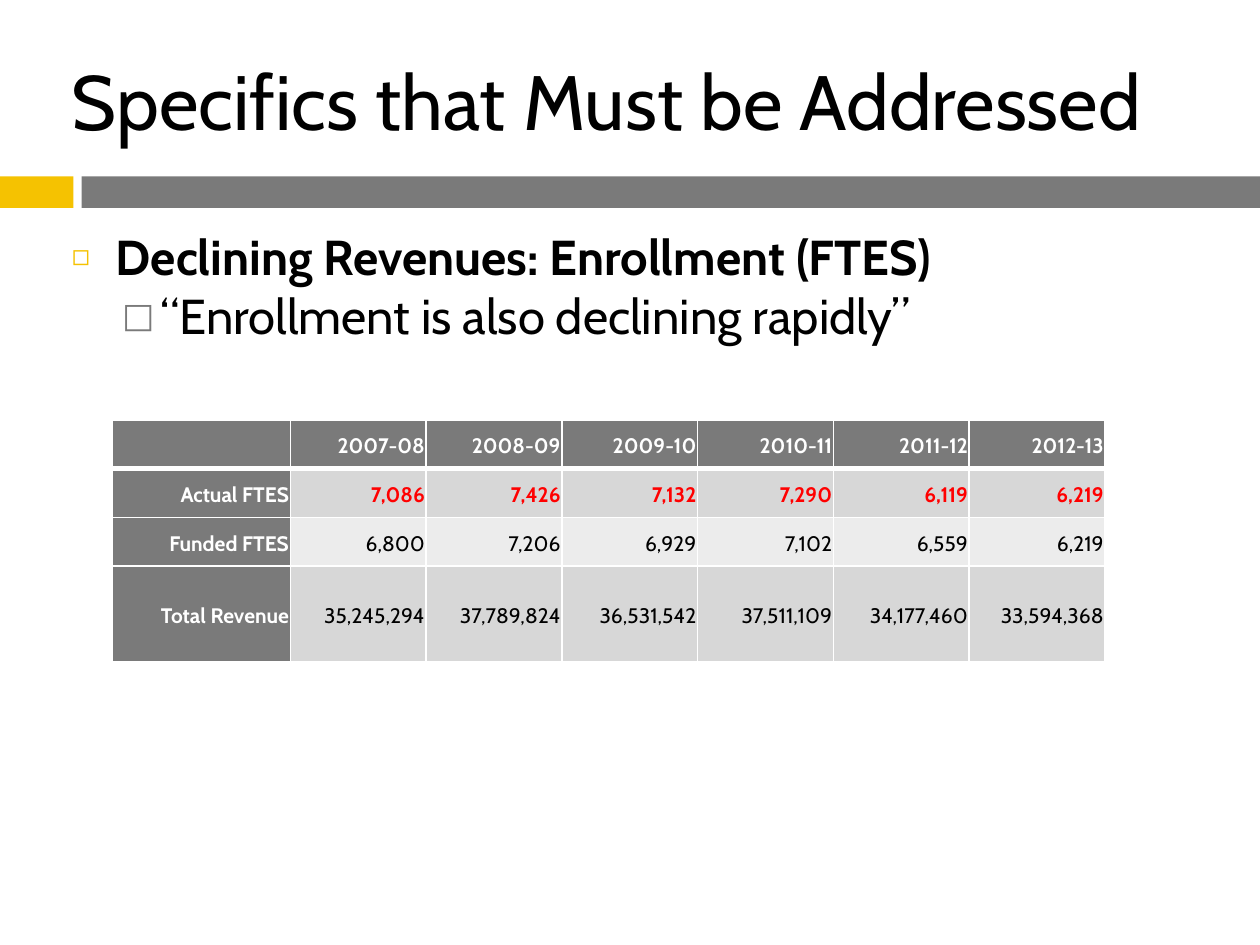
import pptx
import pptx.dml.color
import pptx.enum.shapes
import pptx.enum.text
import pptx.oxml
import pptx.oxml.ns
import pptx.util

Pt = pptx.util.Pt
ALIGN = pptx.enum.text.PP_ALIGN
MIDDLE = pptx.enum.text.MSO_ANCHOR.MIDDLE

# Content
FONT = "Cabin"
COLORS = {"black": "000000", "white": "FFFFFF", "gold": "F5C201", "gray": "7A7A7A",
          "red": "FF0000", "band": "D7D7D7", "light": "ECECEC"}
TITLE = "Specifics that Must be Addressed"
# text, level, bold, bullet, bullet color, bullet size %, indent, hanging
BULLETS = [
    ("Declining Revenues: Enrollment (FTES)", 0, True, "◻", "gold", 60, 25.2, 25.2),
    ("“Enrollment is also declining rapidly”", 1, False, "□", "gray", 70, 50.4, 21.6),
]
ROWS = [
    ["", "2007-08", "2008-09", "2009-10", "2010-11", "2011-12", "2012-13"],
    ["Actual FTES", "7,086", "7,426", "7,132", "7,290", "6,119", "6,219"],
    ["Funded FTES", "6,800", "7,206", "6,929", "7,102", "6,559", "6,219"],
    ["Total Revenue", "35,245,294", "37,789,824", "36,531,542", "37,511,109",
     "34,177,460", "33,594,368"],
]
# Fill, text color and boldness of the values in each row
ROW_STYLES = [("gray", "white", True), ("band", "red", True),
              ("light", "black", False), ("band", "black", False)]
COL_WIDTHS = [102] + [77.6] * 6
ROW_HEIGHTS = [27.8] * 3 + [54.6]
BARS = [("gold", 0, 42), ("gray", 46.6, 673.4)]


def rgb(name):
    return pptx.dml.color.RGBColor.from_string(COLORS[name])


def place(shape, left, top, width, height):
    shape.left, shape.top, shape.width, shape.height = map(Pt, (left, top, width, height))


def add_run(p, text, size, color, bold=False):
    r = p.add_run()
    r.text = text
    r.font.name, r.font.size, r.font.bold = FONT, Pt(size), bold
    r.font.color.rgb = rgb(color)


def xml(tag, attrs, inner=""):
    ns = pptx.oxml.ns.nsdecls("a")
    return pptx.oxml.parse_xml(f"<a:{tag} {ns} {attrs}>{inner}</a:{tag}>")


def set_bullet(p, char, color, percent, indent, hanging):
    pPr = p._p.get_or_add_pPr()
    pPr.set("marL", str(Pt(indent)))
    pPr.set("indent", str(-Pt(hanging)))
    pPr.append(xml("buClr", "", f'<a:srgbClr val="{COLORS[color]}"/>'))
    pPr.append(xml("buSzPct", f'val="{percent * 1000}"'))
    pPr.append(xml("buFont", f'typeface="{FONT}"'))
    pPr.append(xml("buChar", f'char="{char}"'))


def set_borders(cell, top, bottom):
    tcPr = cell._tc.get_or_add_tcPr()
    fill = f'<a:solidFill><a:srgbClr val="{COLORS["white"]}"/></a:solidFill>'
    sides = [("lnL", 1), ("lnR", 1), ("lnT", top), ("lnB", bottom)]
    for i, (side, width) in enumerate(sides):
        tcPr.insert(i, xml(side, f'w="{Pt(width)}"', fill))


prs = pptx.Presentation()
prs.slide_width, prs.slide_height = Pt(720), Pt(540)
s = prs.slides.add_slide(prs.slide_layouts[1])
title, body = s.placeholders

# Divider bars
for color, left, width in BARS:
    sp = s.shapes.add_shape(pptx.enum.shapes.MSO_SHAPE.RECTANGLE,
                            Pt(left), Pt(100.8), Pt(width), Pt(18))
    sp.shadow.inherit = False
    sp.fill.solid()
    sp.fill.fore_color.rgb = rgb(color)
    sp.line.fill.background()

# Title
place(title, 33.84, 18, 642.24, 77.76)
tf = title.text_frame
tf.auto_size = pptx.enum.text.MSO_AUTO_SIZE.NONE
tf.vertical_anchor = MIDDLE
p = tf.paragraphs[0]
p.alignment = ALIGN.LEFT
add_run(p, TITLE, 44, "black")

# Bullet list
place(body, 33.84, 126, 656.64, 386.64)
tf = body.text_frame
tf.auto_size = pptx.enum.text.MSO_AUTO_SIZE.NONE
for i, (text, level, bold, *bullet) in enumerate(BULLETS):
    p = tf.add_paragraph() if i else tf.paragraphs[0]
    p.level = level
    p.space_before = Pt(0)
    set_bullet(p, *bullet)
    add_run(p, text, 28, "black", bold)

# Enrollment table
table = s.shapes.add_table(len(ROWS), len(COL_WIDTHS), Pt(63.9), Pt(240),
                           Pt(sum(COL_WIDTHS)), Pt(sum(ROW_HEIGHTS))).table
for col, width in zip(table.columns, COL_WIDTHS):
    col.width = Pt(width)
for i, (texts, style) in enumerate(zip(ROWS, ROW_STYLES)):
    table.rows[i].height = Pt(ROW_HEIGHTS[i])
    for j, text in enumerate(texts):
        fill, color, bold = style if j else ROW_STYLES[0]
        cell = table.cell(i, j)
        cell.margin_left = cell.margin_right = Pt(0.72)
        cell.margin_top = cell.margin_bottom = Pt(0.72)
        cell.vertical_anchor = MIDDLE
        cell.fill.solid()
        cell.fill.fore_color.rgb = rgb(fill)
        set_borders(cell, 3 if i == 1 else 1, 3 if i == 0 else 1)
        p = cell.text_frame.paragraphs[0]
        p.alignment = ALIGN.RIGHT
        p.line_spacing = 1.15
        if text:
            add_run(p, text, 12, color, bold)

prs.save("out.pptx")
